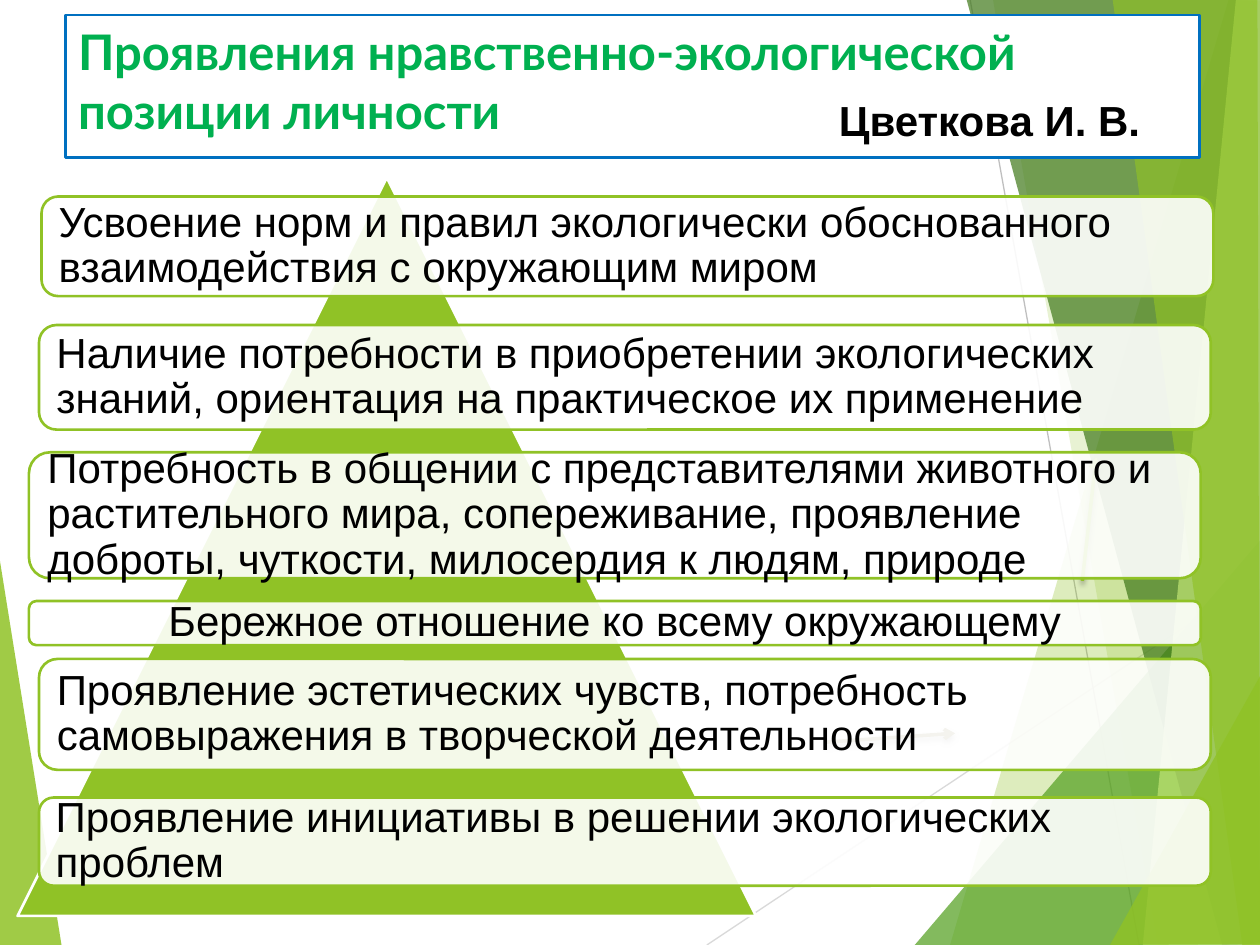
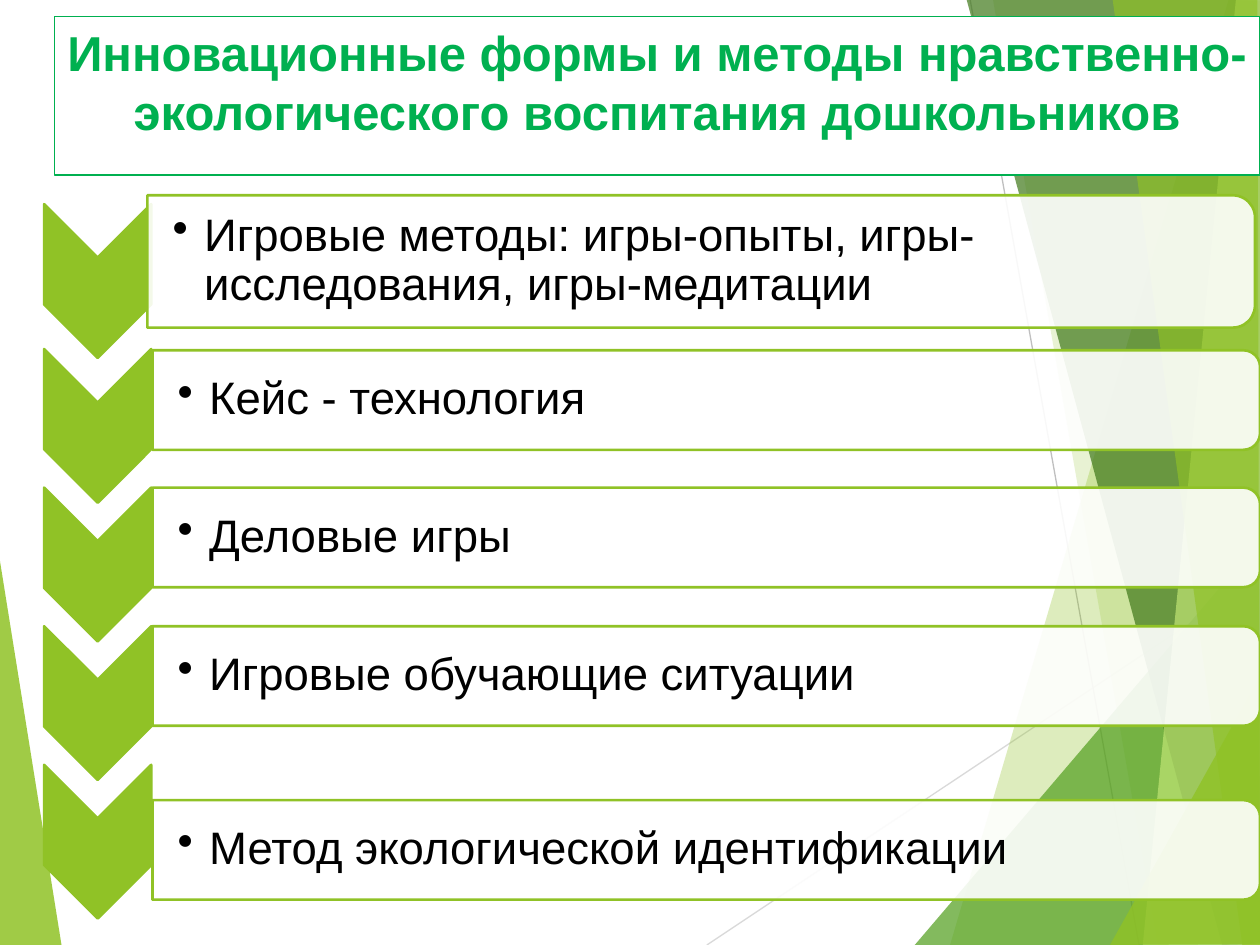
import pptx
import pptx.util
import pptx.dml.color
import pptx.enum.shapes
import pptx.enum.text
import pptx.oxml
import pptx.oxml.ns

Inches = pptx.util.Inches
SHAPE = pptx.enum.shapes.MSO_SHAPE
ALIGN = pptx.enum.text.PP_ALIGN
ANCHOR = pptx.enum.text.MSO_ANCHOR
qn = pptx.oxml.ns.qn

WHITE, BLACK = "FFFFFF", "000000"
LIME, LEAF, FOREST, PALE = "90C226", "54A021", "3F7819", "C0E474"
TITLE_GREEN, BLUE, SAND = "00B050", "0070C0", "918655"

FACETS = [
    (LIME, 85, [(-0.01, 4.39), (0.49, 7.51), (-0.01, 7.5)]),
    (LIME, 30, [(9.75, 0), (7.54, 7.5), (10.02, 7.51), (10.01, 0.01)]),
    (LIME, 20, [(7.88, -0.01), (9.19, 7.5), (10.01, 7.5), (10.01, -0.01)]),
    (LEAF, 72, [(7.26, 7.5), (10, 4.29), (10.01, 7.5)]),
    (FOREST, 70, [(7.67, -0.01), (9.7, 7.5), (10.01, 7.49), (10.01, -0.01)]),
    (PALE, 70, [(9.81, -0.01), (9.07, 7.5), (10.01, 7.5), (10, -0.01)]),
    (LIME, 65, [(8.83, -0.01), (9.86, 7.5), (10, 7.5), (9.98, -0.01)]),
    (LIME, 80, [(8.81, 7.5), (10.01, 5.35), (10.01, 7.49)]),
]

MANIFESTATIONS = [
    (0.33, 1.56, 0.79, "Усвоение норм и правил экологически обоснованного взаимодействия с окружающим миром"),
    (0.31, 2.58, 0.83, "Наличие потребности в приобретении экологических знаний, ориентация на практическое их применение"),
    (0.23, 3.59, 1, "Потребность в общении с представителями животного и растительного мира, сопереживание, проявление доброты, чуткости, милосердия к людям, природе"),
    (0.23, 4.77, 0.35, "Бережное отношение ко всему окружающему"),
    (0.31, 5.23, 0.88, "Проявление эстетических чувств, потребность самовыражения в творческой деятельности"),
    (0.31, 6.33, 0.7, "Проявление инициативы в решении экологических проблем"),
]

METHODS = [
    (1.62, 1.17, 1.55, 1.05, "Игровые методы: игры-опыты, игры-исследования, игры-медитации"),
    (2.77, 1.21, 2.78, 0.79, "Кейс - технология"),
    (3.87, 1.21, 3.87, 0.79, "Деловые игры"),
    (4.97, 1.21, 4.97, 0.79, "Игровые обучающие ситуации"),
    (6.07, 1.21, 6.35, 0.79, "Метод экологической идентификации"),
]


def rgb(value):
    return pptx.dml.color.RGBColor.from_string(value)


def xml(tag, inner="", attrs=""):
    return pptx.oxml.parse_xml(
        f'<a:{tag} {pptx.oxml.ns.nsdecls("a")} {attrs}>{inner}</a:{tag}>')


def paint(sh, fill, alpha=100, line=None, width=1.5):
    sh.fill.solid()
    sh.fill.fore_color.rgb = rgb(fill)
    if alpha < 100:
        color = sh.element.spPr.find(qn("a:solidFill")).find(qn("a:srgbClr"))
        color.append(xml("alpha", attrs=f'val="{alpha * 1000}"'))
    if line:
        sh.line.color.rgb = rgb(line)
        sh.line.width = pptx.util.Pt(width)
    else:
        sh.line.fill.background()


def write(sh, text, size=24, font="Arial", color=BLACK, bold=False, align=ALIGN.LEFT,
          anchor=ANCHOR.TOP, insets=(0.1, 0.05, 0.1, 0.05), spacing=1.0, bullet=False):
    tf = sh.text_frame
    tf.word_wrap = True
    tf.auto_size = pptx.enum.text.MSO_AUTO_SIZE.NONE
    tf.vertical_anchor = anchor
    tf.margin_left, tf.margin_top, tf.margin_right, tf.margin_bottom = map(Inches, insets)
    p = tf.paragraphs[0]
    p.alignment, p.line_spacing = align, spacing
    if bullet:
        pPr = p._p.get_or_add_pPr()
        pPr.set("marL", str(Inches(0.25)))
        pPr.set("indent", str(-Inches(0.25)))
        pPr.append(xml("buChar", attrs='char="•"'))
    r = p.add_run()
    r.text = text
    r.font.size, r.font.name, r.font.bold = pptx.util.Pt(size), font, bold
    r.font.color.rgb = rgb(color)


def add_shape(s, kind, box, fill, rotation=0, **look):
    sh = s.shapes.add_shape(kind, *map(Inches, box))
    sh.shadow.inherit = False
    sh.rotation = rotation
    paint(sh, fill, **look)
    return sh


def add_turned_shape(s, kind, box, fill, **look):
    x, y, w, h = box
    turned = (x + (w - h) / 2, y + (h - w) / 2, h, w)
    return add_shape(s, kind, turned, fill, rotation=90, **look)


def add_text(s, box, text, **style):
    write(s.shapes.add_textbox(*map(Inches, box)), text, **style)


def add_line(s, start, end, color, width, arrow=False):
    ln = s.shapes.add_connector(pptx.enum.shapes.MSO_CONNECTOR.STRAIGHT,
                                *map(Inches, start + end))
    ln.line.color.rgb = rgb(color)
    ln.line.width = pptx.util.Pt(width)
    shadow = ""
    if arrow:
        ln.element.spPr.find(qn("a:ln")).append(xml("tailEnd", attrs='type="arrow"'))
        shadow = ('<a:outerShdw blurRad="38100" dist="25400" dir="5400000">'
                  '<a:srgbClr val="000000"><a:alpha val="35000"/></a:srgbClr></a:outerShdw>')
    ln.element.spPr.append(xml("effectLst", shadow))
    return ln


def add_facet(s, color, alpha, points):
    corners = [tuple(map(Inches, point)) for point in points]
    builder = s.shapes.build_freeform(*corners[0])
    builder.add_line_segments(corners[1:], close=True)
    sh = builder.convert_to_shape()
    sh.shadow.inherit = False
    paint(sh, color, alpha)
    return sh


def build_master(prs, s):
    first, *rest = FACETS
    parts = [add_facet(s, *first),
             add_line(s, (5.61, 7.5), (10.01, 4.57), "D9D9D9", 0.75),
             add_line(s, (7.7, 0), (9.04, 7.5), "BFBFBF", 0.75)]
    parts += [add_facet(s, *facet) for facet in rest]
    tree = prs.slide_master.element.cSld.spTree
    for i, sh in enumerate(parts):
        sh.element.xpath(".//p:cNvPr")[0].set("id", str(100 + i))
        tree.insert(2 + i, sh.element)


def add_title(s, box, text, line, width, **style):
    sh = s.shapes.title
    sh.left, sh.top, sh.width, sh.height = map(Inches, box)
    paint(sh, WHITE, line=line, width=width)
    write(sh, text, size=28, color=TITLE_GREEN, bold=True, **style)


def build_manifestations(s):
    add_title(s, (0.52, 0.12, 9, 1.13), "Проявления нравственно-экологической позиции личности",
              BLUE, 1.5, font="Lato")
    add_line(s, (6.56, 5.89), (7.58, 5.82), SAND, 2, arrow=True)
    add_line(s, (8.59, 4.61), (8.7, 3.63), LIME, 2, arrow=True)
    add_text(s, (6.56, 0.7, 2.85, 0.5), "Цветкова И. В.", bold=True)
    add_shape(s, SHAPE.ISOSCELES_TRIANGLE, (0.14, 1.41, 5.86, 5.86), LIME, line=WHITE)
    for x, y, h, text in MANIFESTATIONS:
        sh = add_shape(s, SHAPE.ROUNDED_RECTANGLE, (x, y, 9.3, h), WHITE, alpha=90, line=LIME)
        write(sh, text, anchor=ANCHOR.MIDDLE, insets=(0.1,) * 4, spacing=0.9,
              align=ALIGN.CENTER if h < 0.5 else ALIGN.LEFT)


def build_methods(s):
    add_title(s, (0.43, 0.13, 9.57, 1.26),
              "Инновационные формы и методы нравственно-экологического воспитания дошкольников",
              TITLE_GREEN, 0.75, align=ALIGN.CENTER)
    for chevron_top, x, y, h, text in METHODS:
        add_turned_shape(s, SHAPE.CHEVRON, (0.35, chevron_top, 0.85, 1.22), LIME, line=LIME)
        add_turned_shape(s, SHAPE.ROUND_2_SAME_RECTANGLE, (x, y, 8.79, h), WHITE,
                         alpha=90, line=LIME)
        add_text(s, (x, y + 0.04, 8.75, h - 0.08), text, size=26, anchor=ANCHOR.MIDDLE,
                 insets=(0.2, 0.02, 0.02, 0.02), spacing=0.9, bullet=True)


def main():
    prs = pptx.Presentation()
    prs.slide_width, prs.slide_height = Inches(10), Inches(7.5)
    title_only = prs.slide_layouts[5]
    s = prs.slides.add_slide(title_only)
    build_master(prs, s)
    build_manifestations(s)
    build_methods(prs.slides.add_slide(title_only))
    prs.save("out.pptx")


if __name__ == "__main__":
    main()
